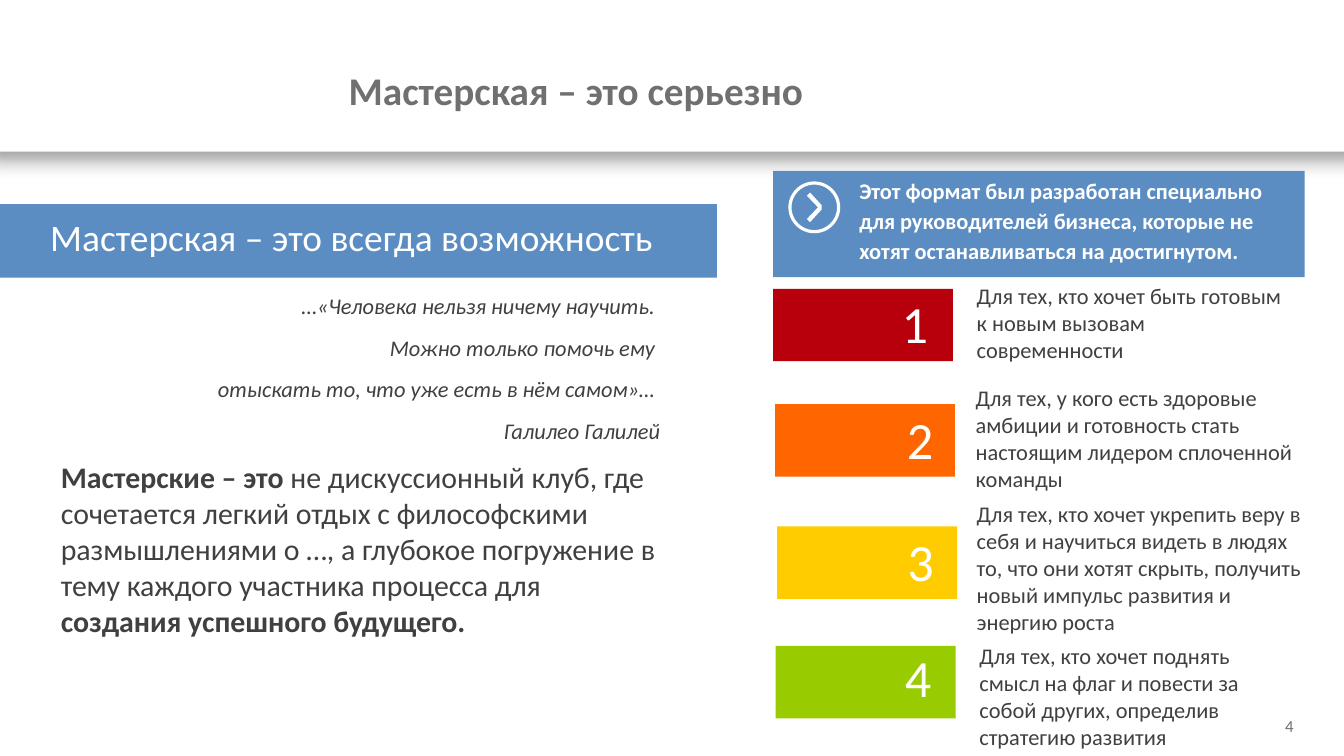
from lxml import etree
from pptx import Presentation
from pptx.dml.color import RGBColor
from pptx.enum import shapes, text
from pptx.oxml import ns
from pptx.util import Cm, Pt

# Content
TITLE = "Мастерская – это серьезно"
HEADING = "Мастерская – это всегда возможность"
QUOTE = [
    "…«Человека нельзя ничему научить. ",
    "Можно только помочь ему ",
    "отыскать то, что уже есть в нём самом»… ",
    "Галилео Галилей",
]
# (wording, bold)
SUMMARY = [
    ("Мастерские – это ", True),
    ("не дискуссионный клуб, где сочетается легкий отдых с философскими "
     "размышлениями о …, а глубокое погружение в тему каждого участника "
     "процесса для ", False),
    ("создания успешного будущего.", True),
]
FORMAT_NOTE = ("Этот формат был разработан специально для руководителей бизнеса, "
               "которые не хотят останавливаться на достигнутом.")
# colour, chip left and top, number left and top, text box, wording
AUDIENCES = [
    ("B7000C", (14.61, 5.46), (16.72, 5.38), (18.28, 5.23, 6.3, 1.73),
     "Для тех, кто хочет быть готовым к новым вызовам современности"),
    ("FF6600", (14.65, 7.64), (16.82, 7.57), (18.26, 7.16, 6.6, 2.24),
     "Для тех, у кого есть здоровые амбиции и готовность стать настоящим "
     "лидером сплоченной команды"),
    ("FFCC00", (14.69, 9.95), (16.83, 9.88), (18.28, 9.36, 6.78, 2.77),
     "Для тех, кто хочет укрепить веру в себя и научиться видеть в людях то, "
     "что они хотят скрыть, получить новый импульс развития и энергию роста"),
    ("99CC00", (14.66, 12.21), (16.78, 12.07), (18.33, 12.04, 5.97, 2.24),
     "Для тех, кто хочет поднять смысл на флаг и повести за собой других, "
     "определив стратегию развития"),
]
PAGE_NUMBER = "4"

FONT = "Calibri"
WHITE, BLUE, GREY, DARK = "FFFFFF", "5C8DC2", "707070", "404040"
DEFAULT_INSETS = (0.25, 0.13)
NARROW_INSETS = (0.18, 0.1)
ALIGN, ANCHOR = text.PP_ALIGN, text.MSO_ANCHOR


def colour(value):
    return RGBColor.from_string(value)


def style(run, size, hex_colour, bold=False, italic=False):
    run.font.name, run.font.size = FONT, Pt(size)
    run.font.color.rgb = colour(hex_colour)
    run.font.bold, run.font.italic = bold, italic


def set_frame(frame, insets, anchor=ANCHOR.TOP, wrap=True):
    frame.word_wrap = wrap
    frame.vertical_anchor = anchor
    frame.margin_left = frame.margin_right = Cm(insets[0])
    frame.margin_top = frame.margin_bottom = Cm(insets[1])


def paint(shape, hex_colour):
    shape.shadow.inherit = False
    shape.fill.solid()
    shape.fill.fore_color.rgb = colour(hex_colour)
    shape.line.fill.background()


def add_block(parent, box, hex_colour):
    shape = parent.add_shape(shapes.MSO_SHAPE.RECTANGLE, *map(Cm, box))
    paint(shape, hex_colour)
    return shape


def add_label(parent, box, wording, size, hex_colour, bold=False,
              align=ALIGN.LEFT, spacing=None, insets=DEFAULT_INSETS,
              anchor=ANCHOR.TOP, wrap=True):
    frame = parent.add_textbox(*map(Cm, box)).text_frame
    set_frame(frame, insets, anchor, wrap)
    frame.text = wording
    paragraph = frame.paragraphs[0]
    paragraph.alignment, paragraph.line_spacing = align, spacing
    style(paragraph.runs[0], size, hex_colour, bold)


presentation = Presentation()
presentation.slide_width, presentation.slide_height = Cm(25.4), Cm(14.29)
slide = presentation.slides.add_slide(presentation.slide_layouts[5])

# Header band with its shadow, behind the title
band = add_block(slide.shapes, (-0.41, -0.2, 26.11, 3.07), WHITE)
effects = band._element.spPr.find(ns.qn("a:effectLst"))
shadow = etree.SubElement(effects, ns.qn("a:outerShdw"), blurRad=str(Pt(10)),
                          dist=str(Pt(6)), dir=str(45 * 60000), rotWithShape="0")
shadow_colour = etree.SubElement(shadow, ns.qn("a:srgbClr"), val="000000")
etree.SubElement(shadow_colour, ns.qn("a:alpha"), val="40000")
slide.shapes._spTree.insert(2, band._element)

# Title
title = slide.shapes.title
title.left, title.top, title.width, title.height = map(Cm, (6.11, 0.69, 18.57, 2.01))
set_frame(title.text_frame, (0.48, 0.51), ANCHOR.MIDDLE)
title.text_frame.text = TITLE
title.text_frame.paragraphs[0].alignment = ALIGN.LEFT
style(title.text_frame.paragraphs[0].runs[0], 21, GREY, bold=True)

# Left column: heading bar, quote and summary
add_block(slide.shapes, (-0.05, 3.86, 13.6, 1.39), BLUE)
body = slide.shapes.add_textbox(*map(Cm, (0.92, 5.42, 11.79, 6.83))).text_frame
set_frame(body, (0.23, 0.1))
body.text = "\n".join(QUOTE)
for paragraph in body.paragraphs:
    paragraph.alignment = ALIGN.RIGHT
    style(paragraph.runs[0], 12, DARK, italic=True)
summary = body.add_paragraph()
for wording, bold in SUMMARY:
    run = summary.add_run()
    run.text = wording
    style(run, 16, DARK, bold)
for paragraph in body.paragraphs[1:]:
    paragraph.space_before = Pt(8)
add_label(slide.shapes, (0.7, 3.86, 11.91, 1.14), HEADING, 20, WHITE,
          spacing=1.1, anchor=ANCHOR.MIDDLE, wrap=False)

# Right column: note panel with a ringed chevron
add_block(slide.shapes, (14.61, 3.23, 10.05, 2.01), BLUE)
CENTRE_X, CENTRE_Y = 15.39, 3.92
RADII = (0.49, 0.43)
CHEVRON = [(-0.08, -0.28), (0.14, -0.04), (0.14, 0.04), (-0.08, 0.28),
           (-0.14, 0.22), (0.07, 0), (-0.14, -0.22)]
quarters = [[(-r, 0), (0, -r), (r, 0), (0, r), (-r, 0)] for r in RADII]
contours = [[(Cm(CENTRE_X + x), Cm(CENTRE_Y + y)) for x, y in points]
            for points in (*quarters, CHEVRON)]
builder = slide.shapes.build_freeform(*contours[0][0])
for index, contour in enumerate(contours):
    if index:
        builder.move_to(*contour[0])
    builder.add_line_segments(contour[1:], close=True)
icon = builder.convert_to_shape()
paint(icon, WHITE)

# Round the two rings: each of their four lines becomes a quarter arc
lines = list(icon._element.iter(ns.qn("a:lnTo")))
for index, line in enumerate(lines[:8]):
    radius = str(Cm(RADII[index // 4]))
    start = (180 + 90 * index) % 360
    arc = etree.Element(ns.qn("a:arcTo"), wR=radius, hR=radius,
                        stAng=str(start * 60000), swAng=str(90 * 60000))
    line.getparent().replace(line, arc)

# Numbered audiences
for number, (fill, chip, place, box, wording) in enumerate(AUDIENCES, 1):
    group = slide.shapes.add_group_shape().shapes
    add_block(group, (*chip, 3.4, 1.37), fill)
    add_label(group, (*place, 1.14, 1.45), str(number), 28, WHITE, align=ALIGN.CENTER)
    add_label(group, box, wording, 12, DARK, insets=NARROW_INSETS)

# Page number
add_label(slide.shapes, (24.09, 13.42, 0.56, 0.58), PAGE_NUMBER, 9, GREY,
          align=ALIGN.CENTER, insets=(0.08, 0.1))

# Note beside the chevron
add_label(slide.shapes, (15.99, 3.18, 8.74, 1.93), FORMAT_NOTE, 12, WHITE,
          bold=True, spacing=1.1, anchor=ANCHOR.MIDDLE)

presentation.save("out.pptx")
